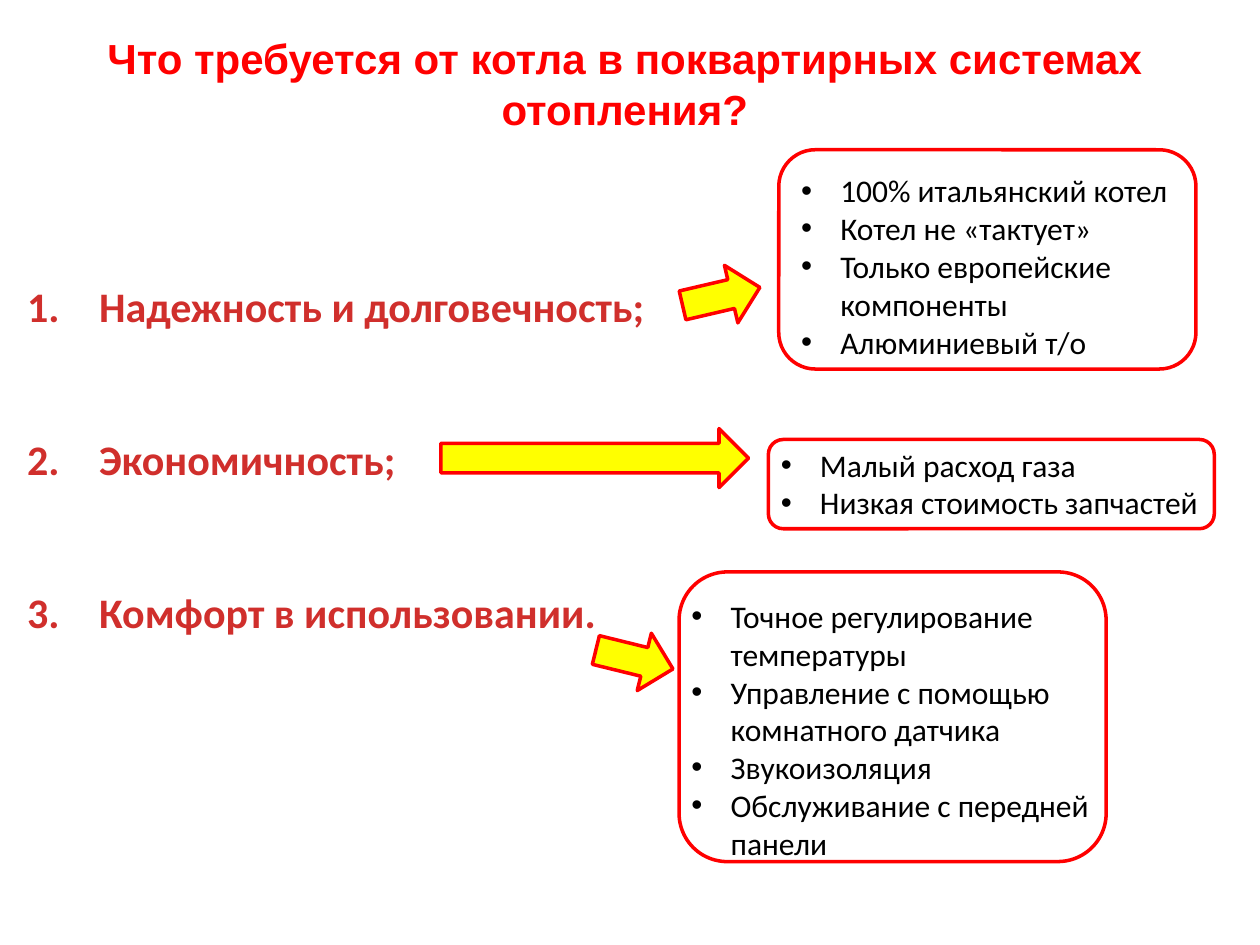
from pptx import Presentation
from pptx.dml.color import RGBColor
from pptx.enum.shapes import MSO_SHAPE
from pptx.enum.text import MSO_ANCHOR, MSO_AUTO_SIZE, PP_ALIGN
from pptx.oxml import parse_xml
from pptx.oxml.ns import nsdecls
from pptx.util import Cm, Pt

RED, YELLOW = "FF0000", "FFFF00"
BULLET = ['<a:buFont {} typeface="Arial"/>', '<a:buChar {} char="•"/>']
NUMBER = ['<a:buFont {} typeface="+mj-lt"/>',
          '<a:buAutoNum {} type="arabicPeriod"/>']


def write(box, lines, size=18, font="Calibri", color="000000", bold=False,
          align=PP_ALIGN.LEFT, marks=(), indent=0, gap=0):
    frame = box.text_frame
    frame.word_wrap = True
    frame.auto_size = MSO_AUTO_SIZE.NONE
    frame.vertical_anchor = MSO_ANCHOR.TOP
    frame.text = "\n".join(lines)
    for i, para in enumerate(frame.paragraphs):
        para.alignment = align
        para.space_before = Pt(gap if i else 0)
        props = para._p.get_or_add_pPr()
        if marks:
            props.set("marL", str(Cm(indent)))
            props.set("indent", str(-Cm(indent)))
        for mark in marks:
            props.append(parse_xml(mark.format(nsdecls("a"))))
        for run in para.runs:
            run.font.size = Pt(size)
            run.font.name = font
            run.font.bold = bold
            run.font.color.rgb = RGBColor.from_string(color)


def draw(kind, place, fill=None, turn=0):
    shape = slide.shapes.add_shape(kind, *map(Cm, place))
    shape.shadow.inherit = False
    shape.rotation = turn
    if fill:
        shape.fill.solid()
        shape.fill.fore_color.rgb = RGBColor.from_string(fill)
    else:
        shape.fill.background()
    shape.line.color.rgb = RGBColor.from_string(RED)
    shape.line.width = Pt(2)


deck = Presentation()
deck.slide_width, deck.slide_height = Cm(25.4), Cm(19.05)
slide = deck.slides.add_slide(deck.slide_layouts[5])

# Title
title = slide.shapes.title
title.left, title.top, title.width, title.height = map(
    Cm, (1.09, 0.53, 23.01, 3.33))
write(title, ["Что требуется от котла в поквартирных системах отопления?"],
      size=24, font="Arial", color=RED, bold=True, align=PP_ALIGN.CENTER)

# Numbered demands
needs = slide.shapes.add_textbox(*map(Cm, (0.3, 5.54, 13.6, 7.44)))
write(needs, ["Надежность и долговечность;", "Экономичность;",
              "Комфорт в использовании."],
      size=24, color="D02F2C", bold=True, marks=NUMBER, indent=1.45, gap=58.6)

# Answers: text place, frame place, lines
answers = [
    ((15.9, 3.33, 8.99, 4.11), (15.7, 3.02, 8.41, 4.42),
     ["100% итальянский котел", "Котел не «тактует»",
      "Только европейские компоненты", "Алюминиевый т/о"]),
    ((15.49, 8.86, 8.99, 1.8), (15.49, 8.86, 8.99, 1.8),
     ["Малый расход газа", "Низкая стоимость запчастей"]),
    ((13.69, 11.91, 8.99, 5.64), (13.69, 11.53, 8.61, 5.84),
     ["Точное регулирование температуры",
      "Управление с помощью комнатного датчика", "Звукоизоляция",
      "Обслуживание с передней панели"]),
]
for place, edge, lines in answers:
    box = slide.shapes.add_textbox(*map(Cm, place))
    write(box, lines, marks=BULLET, indent=0.79)
    draw(MSO_SHAPE.ROUNDED_RECTANGLE, edge)

# Arrows from demand to answer
for left, top, width, turn in [(13.74, 5.38, 1.6, 346.9),
                               (8.89, 8.64, 6.2, 0),
                               (11.99, 12.7, 1.6, 13.8)]:
    draw(MSO_SHAPE.RIGHT_ARROW, (left, top, width, 1.19), YELLOW, turn)

deck.save("out.pptx")
